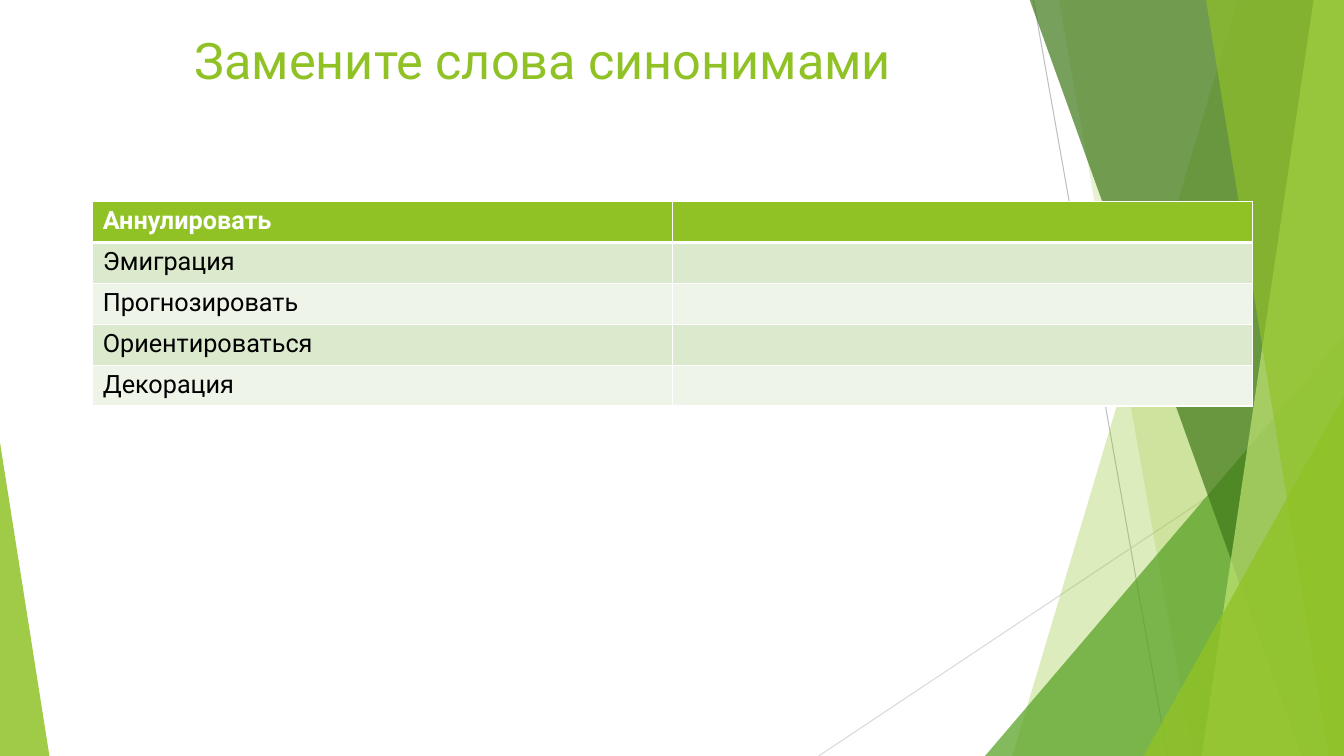
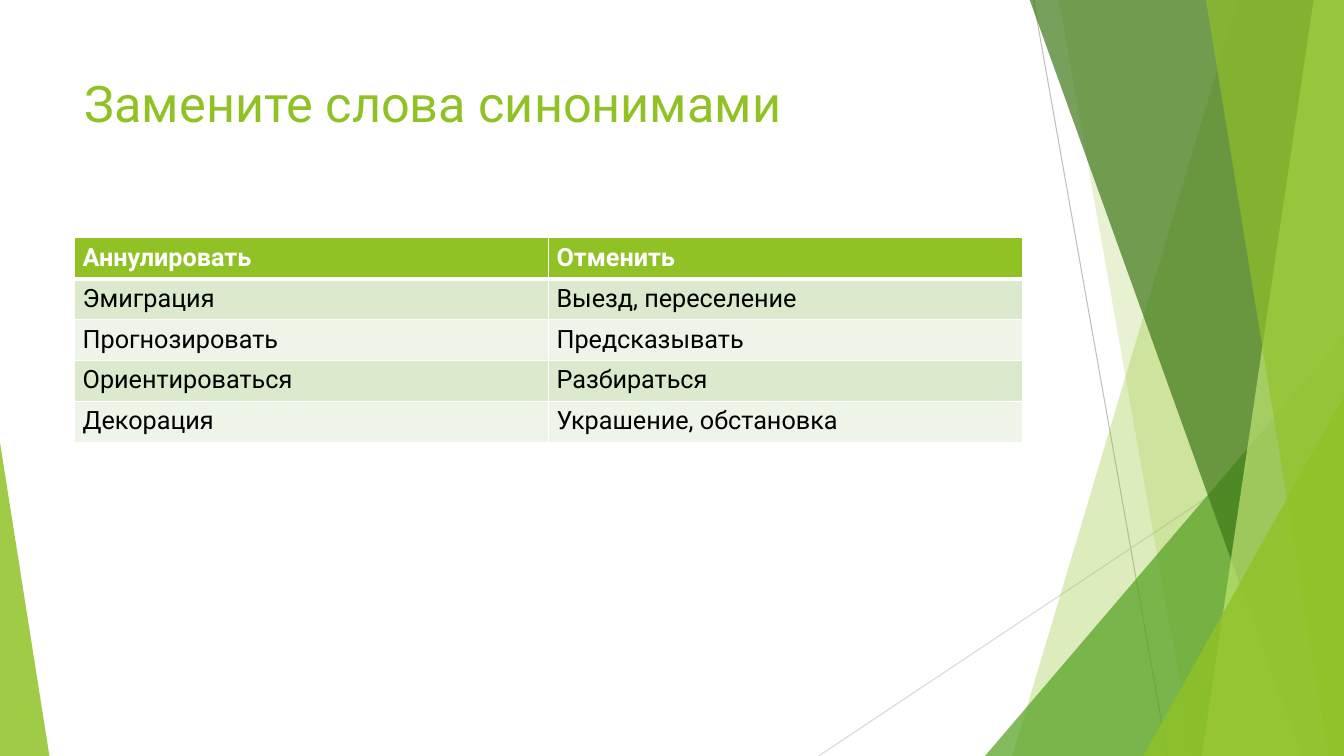
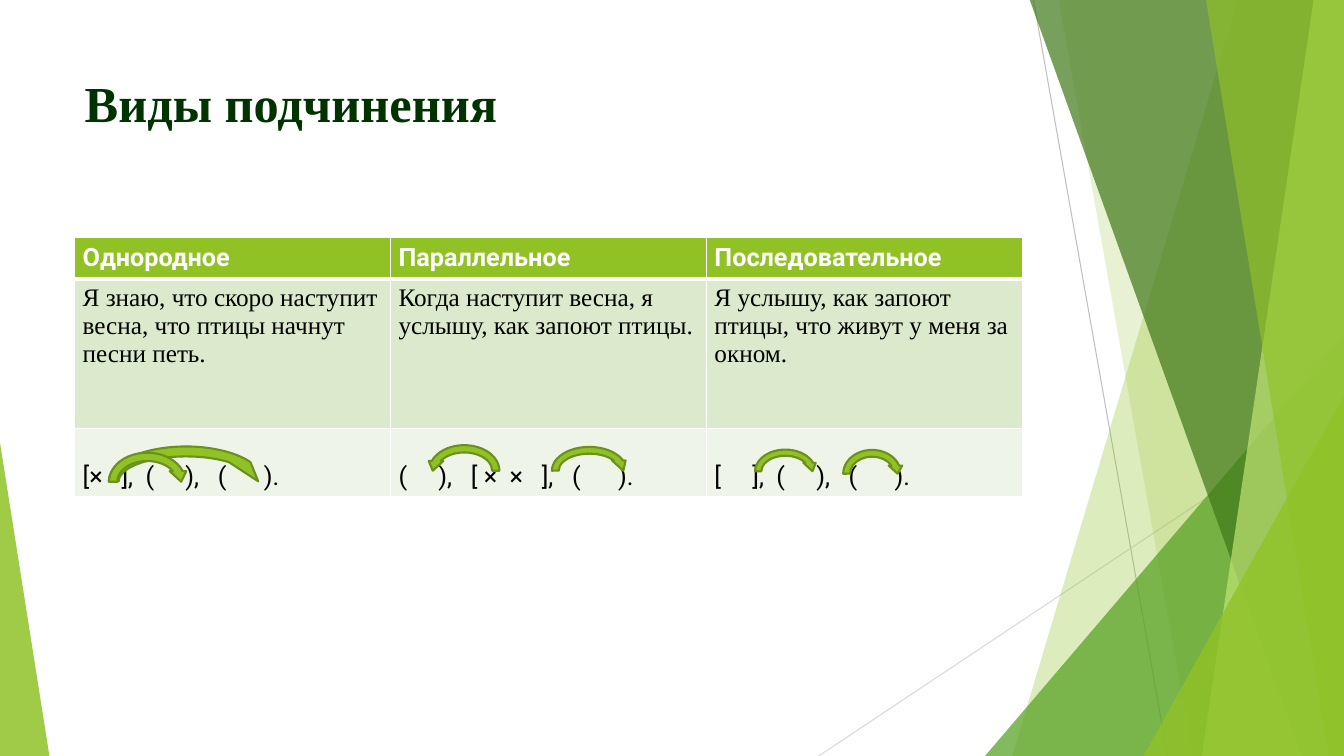
from pptx import Presentation
from pptx.dml.color import RGBColor
from pptx.enum import shapes, text
from pptx.oxml.ns import qn
from pptx.oxml.xmlchemy import OxmlElement
from pptx.util import Inches, Pt

WIDTH, HEIGHT = 13.33, 7.5
GREEN, LEAF, MOSS, LIME = "90C226", "54A021", "3F7819", "C0E474"
OUTLINE, DARK_GREEN = "6B901C", "003300"
WHITE, BLACK = "FFFFFF", "000000"
ROW_FILLS = ["DBE9CD", "EEF4E8"]
SANS, SERIF = "Roboto", "Times New Roman"

WORDS = ["Аннулировать", "Эмиграция", "Прогнозировать", "Ориентироваться", "Декорация"]
SYNONYMS = ["Отменить", "Выезд, переселение", "Предсказывать", "Разбираться",
            "Украшение, обстановка"]
SUBORDINATION = [
    ["Однородное", "Параллельное", "Последовательное"],
    ["Я знаю, что скоро наступит весна, что птицы начнут песни петь.",
     "Когда наступит весна, я услышу, как запоют птицы.",
     "Я услышу, как запоют птицы, что живут у меня за окном."],
    ["[×   ],  (     ),   (      ).",
     "(     ),   [ ×  ×   ],   (      ).",
     "[     ],  (     ),   (      )."],
]
# left, top, width, height, points to the left
ARROWS = [
    (1.03, 4.38, 1.63, 0.79, False),
    (5.44, 4.4, 0.81, 0.54, False),
    (7.46, 4.43, 0.66, 0.49, False),
    (8.33, 4.43, 0.64, 0.54, False),
    (4.22, 4.38, 0.77, 0.58, True),
    (1.04, 4.45, 0.84, 0.66, False),
]


def rgb(value):
    return RGBColor.from_string(value)


def format_text(frame, font, size, color, bold=False):
    for para in frame.paragraphs:
        para.alignment = text.PP_ALIGN.LEFT
        for span in para.runs:
            span.font.name = font
            span.font.size = Pt(size)
            span.font.bold = bold
            span.font.color.rgb = rgb(color)


def tint(shape, color, opacity):
    """Fill a shape with a see-through colour and drop its line and shadow."""
    shape.shadow.inherit = False
    shape.line.fill.background()
    shape.fill.solid()
    shape.fill.fore_color.rgb = rgb(color)
    alpha = OxmlElement("a:alpha")
    alpha.set("val", str(opacity * 1000))
    shape.element.spPr.find(".//" + qn("a:srgbClr")).append(alpha)
    return shape


def add_line(page, start, end, color):
    line = page.shapes.add_connector(
        shapes.MSO_CONNECTOR.STRAIGHT, *[Inches(value) for value in start + end])
    line.line.color.rgb = rgb(color)
    line.line.width = Pt(0.75)
    line.element.spPr.append(OxmlElement("a:effectLst"))
    return line


def add_band(page, top_x, bottom_x, color, opacity):
    """Add a slanted band that runs from its left edge to the slide's right edge."""
    corners = [(Inches(x), Inches(y)) for x, y in
               [(top_x, -0.01), (WIDTH, -0.01), (WIDTH, HEIGHT), (bottom_x, HEIGHT)]]
    builder = page.shapes.build_freeform(*corners[0])
    builder.add_line_segments(corners[1:], close=True)
    return tint(builder.convert_to_shape(), color, opacity)


def add_triangle(page, left, top, width, apex, color, opacity):
    """Add a triangle standing on the slide's bottom edge."""
    triangle = page.shapes.add_shape(
        shapes.MSO_SHAPE.ISOSCELES_TRIANGLE,
        Inches(left), Inches(top), Inches(width), Inches(HEIGHT - top))
    triangle.adjustments[0] = apex
    return tint(triangle, color, opacity)


def decorate_layout(layout, page):
    """Draw the shared decoration on a page and move it to the layout."""
    decoration = [
        add_line(page, (10.25, 0), (11.58, HEIGHT), "BFBFBF"),
        add_line(page, (WIDTH, 4.03), (8.12, HEIGHT), "D9D9D9"),
        add_band(page, 12.28, 10.04, GREEN, 30),
        add_band(page, 10.5, 11.83, GREEN, 20),
        add_triangle(page, 9.77, 3.33, 3.56, 1, LEAF, 72),
        add_band(page, 10.21, 12.91, MOSS, 70),
        add_band(page, 13.03, 11.92, LIME, 70),
        add_band(page, 11.96, 13.18, GREEN, 65),
        add_triangle(page, 11.34, 3.93, 1.99, 1, GREEN, 80),
        add_triangle(page, 0, 4.39, 0.49, 0, GREEN, 85),
    ]
    for index, shape in enumerate(decoration):
        shape.element.find(".//" + qn("p:cNvPr")).set("id", str(100 + index))
        layout.shapes.element.insert(2 + index, shape.element)


def set_title(page, words, left=0.74, top=0.67, width=9.4,
              font=SANS, color=GREEN, bold=False):
    title = page.shapes.title
    title.left, title.top = Inches(left), Inches(top)
    title.width, title.height = Inches(width), Inches(1.44)
    frame = title.text_frame
    frame.text = words
    frame.word_wrap = True
    frame.vertical_anchor = text.MSO_ANCHOR.TOP
    format_text(frame, font, 36, color, bold)


def add_border(cell, side, points):
    line = OxmlElement("a:ln" + side)
    line.set("w", str(Pt(points)))
    fill = OxmlElement("a:solidFill")
    color = OxmlElement("a:srgbClr")
    color.set("val", WHITE)
    fill.append(color)
    line.append(fill)
    cell._tc.get_or_add_tcPr().append(line)


def add_grid(page, rows, left=0.74, top=2.36, width=9.4, height=2.03, margin=0.08):
    """Add a table with a green header, striped rows and white borders."""
    table = page.shapes.add_table(
        len(rows), len(rows[0]),
        Inches(left), Inches(top), Inches(width), Inches(height)).table
    for r, row in enumerate(rows):
        header = r == 0
        for c, words in enumerate(row):
            cell = table.cell(r, c)
            cell.margin_left = cell.margin_right = Inches(margin)
            for side in "LRTB":
                thick = (r, side) in [(0, "B"), (1, "T")]
                add_border(cell, side, 3 if thick else 1)
            cell.fill.solid()
            cell.fill.fore_color.rgb = rgb(GREEN if header else ROW_FILLS[(r - 1) % 2])
            cell.text_frame.text = words
            format_text(cell.text_frame, SANS, 18, WHITE if header else BLACK, header)
    return table


def add_arc_arrow(page, left, top, width, height, mirrored):
    arrow = page.shapes.add_shape(
        shapes.MSO_SHAPE.CIRCULAR_ARROW,
        Inches(left), Inches(top), Inches(width), Inches(height))
    arrow.shadow.inherit = False
    arrow.fill.solid()
    arrow.fill.fore_color.rgb = rgb(GREEN)
    arrow.line.color.rgb = rgb(OUTLINE)
    arrow.line.width = Pt(1.5)
    if mirrored:
        arrow.element.spPr.find(qn("a:xfrm")).set("flipH", "1")


def add_subordination(page):
    table = add_grid(page, SUBORDINATION, height=2.57)
    for row, height in zip(table.rows, [0.41, 1.48, 0.68]):
        row.height = Inches(height)
    for column in range(len(SUBORDINATION[0])):
        format_text(table.cell(1, column).text_frame, SERIF, 18, BLACK)
        table.cell(2, column).vertical_anchor = text.MSO_ANCHOR.BOTTOM
    for arrow in ARROWS:
        add_arc_arrow(page, *arrow)


def main():
    deck = Presentation()
    deck.slide_width, deck.slide_height = Inches(WIDTH), Inches(HEIGHT)
    layout = deck.slide_layouts[5]
    task, answers, kinds = [deck.slides.add_slide(layout) for _ in range(3)]
    decorate_layout(layout, task)

    set_title(task, "Замените слова синонимами", left=1.83, top=0.24, width=11.5)
    add_grid(task, [(word, "") for word in WORDS],
             left=0.92, top=2, width=11.5, height=2.02, margin=0.1)

    set_title(answers, "Замените слова синонимами")
    add_grid(answers, list(zip(WORDS, SYNONYMS)))

    set_title(kinds, "Виды подчинения", font=SERIF, color=DARK_GREEN, bold=True)
    add_subordination(kinds)

    deck.save("out.pptx")


if __name__ == "__main__":
    main()
